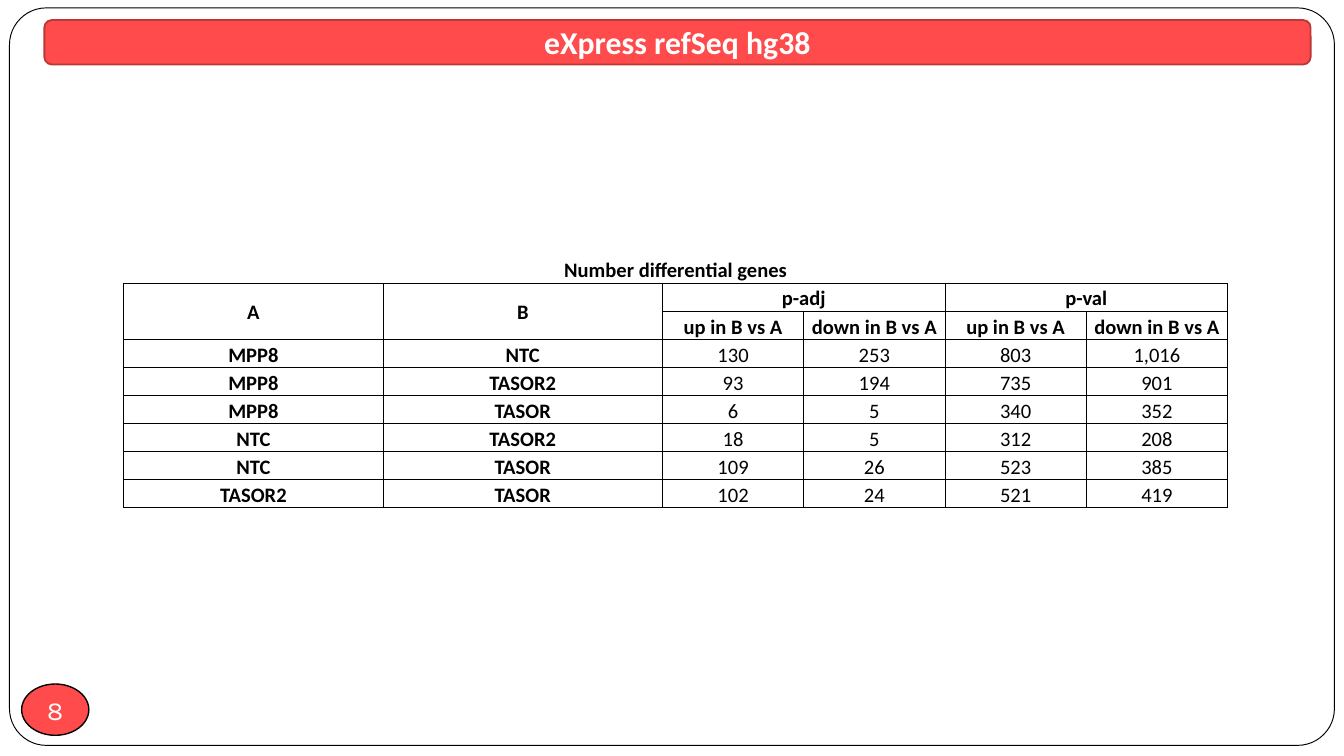
"""Build the slide that counts differential genes for each pair of conditions."""
from dataclasses import dataclass
from typing import Optional

from lxml import etree
from pptx import Presentation
from pptx import util as u
from pptx.dml.color import RGBColor
from pptx.enum import shapes, text
from pptx.oxml import ns

BLACK = RGBColor(0x00, 0x00, 0x00)
WHITE = RGBColor(0xFF, 0xFF, 0xFF)
RED = RGBColor(0xFF, 0x4B, 0x4B)
DARK_RED = RGBColor(0xBD, 0x37, 0x37)

COLUMN_WIDTHS = [4.9, 5.28] + [2.67] * 4
ROW_HEIGHT = 0.53
DIRECTIONS = ["up in B vs A", "down in B vs A"]
ROWS = [
    ["Number differential genes"],
    ["A", "B", "p-adj", "", "p-val", ""],
    ["", ""] + DIRECTIONS * 2,
    ["MPP8", "NTC", "130", "253", "803", "1,016"],
    ["MPP8", "TASOR2", "93", "194", "735", "901"],
    ["MPP8", "TASOR", "6", "5", "340", "352"],
    ["NTC", "TASOR2", "18", "5", "312", "208"],
    ["NTC", "TASOR", "109", "26", "523", "385"],
    ["TASOR2", "TASOR", "102", "24", "521", "419"],
]
HEADER_ROWS = 3
LABEL_COLUMNS = 2
MERGES = [((0, 0), (0, 5)), ((1, 0), (2, 0)), ((1, 1), (2, 1)),
          ((1, 2), (1, 3)), ((1, 4), (1, 5))]


@dataclass(frozen=True)
class Label:
    """Text with its font."""
    wording: str
    font: str
    size: float
    color: RGBColor
    bold: bool = False


@dataclass(frozen=True)
class Panel:
    """A filled preset shape, measured in centimetres."""
    kind: shapes.MSO_SHAPE
    left: float
    top: float
    width: float
    height: float
    fill: RGBColor
    line: RGBColor
    line_width: float
    corner: Optional[float] = None
    label: Optional[Label] = None
    inset: bool = True


PANELS = [
    Panel(shapes.MSO_SHAPE.ROUNDED_RECTANGLE, 0.18, 0.15, 25.04, 13.94,
          WHITE, BLACK, 0.5, corner=0.05),
    Panel(shapes.MSO_SHAPE.OVAL, 0.41, 12.93, 1.27, 0.97, RED, BLACK, 0.75,
          label=Label("8", "Karla", 14, WHITE), inset=False),
    Panel(shapes.MSO_SHAPE.ROUNDED_RECTANGLE, 0.84, 0.38, 23.93, 0.84,
          RED, DARK_RED, 1,
          label=Label("eXpress refSeq hg38", "Calibri", 17, WHITE, True)),
]


def write_label(frame, label: Label) -> None:
    """Put centred, formatted text in a text frame."""
    frame.text = label.wording
    paragraph = frame.paragraphs[0]
    paragraph.alignment = text.PP_ALIGN.CENTER
    for run in paragraph.runs:
        run.font.name = label.font
        run.font.size = u.Pt(label.size)
        run.font.bold = label.bold
        run.font.color.rgb = label.color


def draw_panel(slide, panel: Panel) -> None:
    """Draw one panel with its optional label."""
    shape = slide.shapes.add_shape(
        panel.kind, u.Cm(panel.left), u.Cm(panel.top),
        u.Cm(panel.width), u.Cm(panel.height))
    shape.shadow.inherit = False
    shape.fill.solid()
    shape.fill.fore_color.rgb = panel.fill
    shape.line.color.rgb = panel.line
    shape.line.width = u.Pt(panel.line_width)
    if panel.corner is not None:
        shape.adjustments[0] = panel.corner
    if panel.label:
        frame = shape.text_frame
        frame.vertical_anchor = text.MSO_ANCHOR.MIDDLE
        if not panel.inset:
            frame.word_wrap = False
            frame.margin_left = frame.margin_right = 0
            frame.margin_top = frame.margin_bottom = 0
        write_label(frame, panel.label)


def set_borders(cell, visible_sides: str) -> None:
    """Rule the named sides of a cell and clear the others."""
    properties = cell._tc.get_or_add_tcPr()
    for side in "LRTB":
        line = etree.SubElement(properties, ns.qn(f"a:ln{side}"), w=str(u.Pt(0.5)))
        if side in visible_sides:
            fill = etree.SubElement(line, ns.qn("a:solidFill"))
            etree.SubElement(fill, ns.qn("a:srgbClr"), val=str(BLACK))
        else:
            etree.SubElement(line, ns.qn("a:noFill"))


def format_cell(cell, row: int, column: int) -> None:
    """Set the borders, fill, margins and anchor of a cell."""
    set_borders(cell, "LRTB" if row else "B")
    cell.fill.background()
    cell.margin_left = cell.margin_right = cell.margin_top = u.Cm(0.02)
    cell.margin_bottom = 0
    spans_headers = row == 1 and column < LABEL_COLUMNS
    cell.vertical_anchor = (text.MSO_ANCHOR.MIDDLE if spans_headers
                            else text.MSO_ANCHOR.BOTTOM)


def draw_gene_table(slide) -> None:
    """Draw the table of gene counts."""
    frame = slide.shapes.add_table(
        len(ROWS), len(COLUMN_WIDTHS), u.Cm(2.34), u.Cm(4.83),
        u.Cm(sum(COLUMN_WIDTHS)), u.Cm(ROW_HEIGHT * len(ROWS)))
    table = frame.table
    table.first_row = table.horz_banding = False
    for column, width in zip(table.columns, COLUMN_WIDTHS):
        column.width = u.Cm(width)
    for row in table.rows:
        row.height = u.Cm(ROW_HEIGHT)
    for row in range(len(ROWS)):
        for column in range(len(COLUMN_WIDTHS)):
            format_cell(table.cell(row, column), row, column)
    for first, last in MERGES:
        table.cell(*first).merge(table.cell(*last))
    for row, wordings in enumerate(ROWS):
        for column, wording in enumerate(wordings):
            if wording:
                bold = row < HEADER_ROWS or column < LABEL_COLUMNS
                write_label(table.cell(row, column).text_frame,
                            Label(wording, "Calibri", 11, BLACK, bold))


def main() -> None:
    """Create and save the presentation."""
    presentation = Presentation()
    presentation.slide_width = u.Cm(25.4)
    presentation.slide_height = u.Cm(14.29)
    slide = presentation.slides.add_slide(presentation.slide_layouts[6])
    for panel in PANELS:
        draw_panel(slide, panel)
    draw_gene_table(slide)
    presentation.save("out.pptx")


if __name__ == "__main__":
    main()
